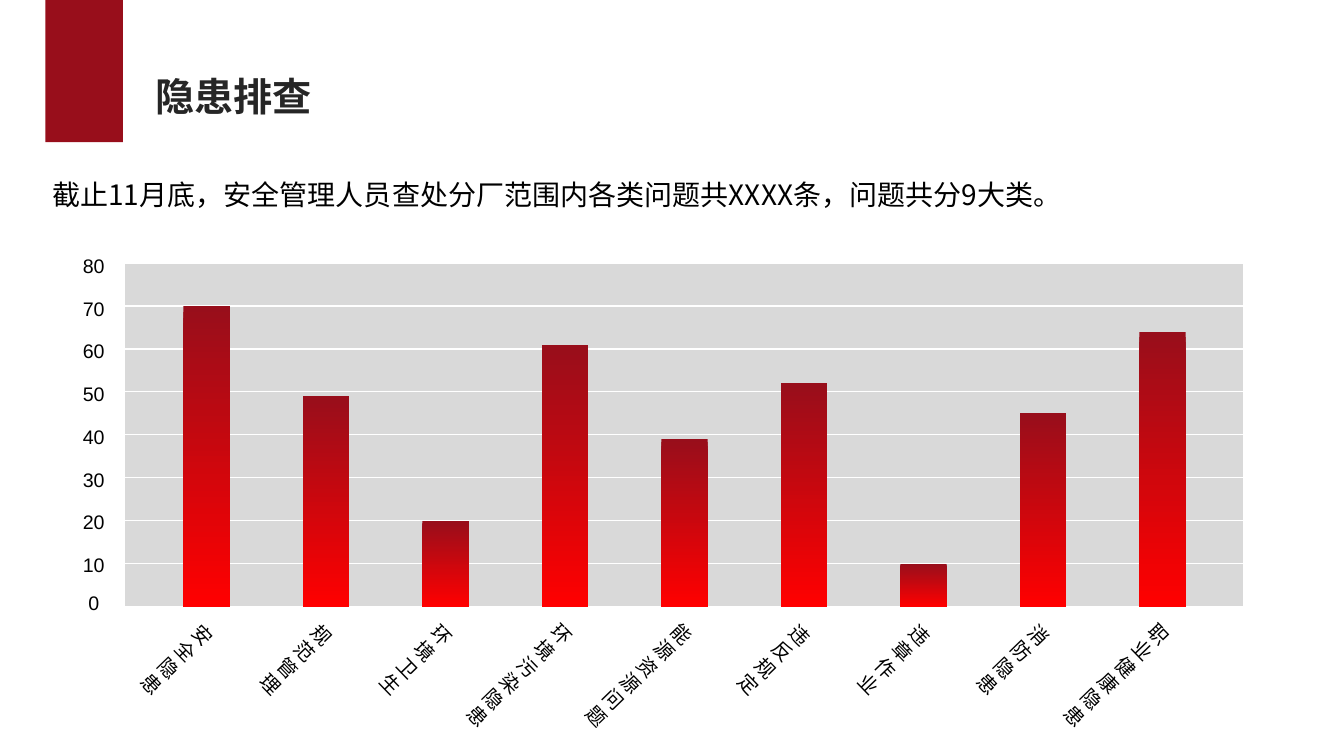
from lxml import etree
from pptx import Presentation
from pptx.dml.color import RGBColor
from pptx.enum.shapes import MSO_SHAPE
from pptx.enum.text import MSO_ANCHOR, MSO_AUTO_SIZE, PP_ALIGN
from pptx.oxml.ns import qn
from pptx.util import Pt

PX = 9144  # 100 px to the inch
DARK_RED = RGBColor(0x98, 0x0E, 0x1B)
RED = RGBColor(0xFF, 0x00, 0x00)
GREY = RGBColor(0xD9, 0xD9, 0xD9)
WHITE = RGBColor(0xFF, 0xFF, 0xFF)
CHARCOAL = RGBColor(0x26, 0x26, 0x26)
BLACK = RGBColor(0x00, 0x00, 0x00)
RECTANGLE = MSO_SHAPE.RECTANGLE
LEFT, CENTER, JUSTIFY = PP_ALIGN.LEFT, PP_ALIGN.CENTER, PP_ALIGN.JUSTIFY
TOP = MSO_ANCHOR.TOP
GROW = MSO_AUTO_SIZE.SHAPE_TO_FIT_TEXT
CHINESE, LATIN = "Noto Sans CJK SC", "Arial"

HAZARDS = [
    ("安全隐患", 70), ("规范管理", 49), ("环境卫生", 20),
    ("环境污染隐患", 61), ("能源资源问题", 39), ("违反规定", 52),
    ("违章作业", 10), ("消防隐患", 45), ("职业健康隐患", 64),
]
AXIS_MAX, AXIS_STEP = 80, 10


def emu(*lengths):
    return [round(length * PX) for length in lengths]


def write(shape, text, size, font=CHINESE, color=BLACK, align=LEFT, wrap=True, bold=False):
    frame = shape.text_frame
    frame.text = text
    frame.word_wrap = wrap
    frame.auto_size = GROW
    frame.vertical_anchor = TOP
    para = frame.paragraphs[0]
    para.alignment = align
    para.font.size = Pt(size)
    para.font.bold = bold
    para.font.color.rgb = color
    para.font.name = font
    east_asian = etree.SubElement(para.font._element, qn("a:ea"))
    east_asian.set("typeface", font)


def add_text(page, box, text, size, **style):
    shape = page.shapes.add_textbox(*emu(*box))
    write(shape, text, size, **style)
    return shape


def add_bar(page, box):
    bar = page.shapes.add_shape(RECTANGLE, *emu(*box))
    bar.shadow.inherit = False
    bar.line.fill.background()
    return bar


def add_header(page, left, top):
    ribbon = add_bar(page, (left, top, 77, 141))
    ribbon.fill.solid()
    ribbon.fill.fore_color.rgb = DARK_RED
    title = page.shapes.title
    title.left, title.top, title.width, title.height = emu(left + 99, top + 67, 177, 57)
    write(title, "隐患排查", 28, color=CHARCOAL, wrap=False, bold=True)


def set_cell_borders(cell, color, points):
    properties = cell._tc.get_or_add_tcPr()
    for index, side in enumerate(("a:lnL", "a:lnR", "a:lnT", "a:lnB")):
        line = etree.Element(qn(side), w=str(Pt(points)))
        fill = etree.SubElement(line, qn("a:solidFill"))
        etree.SubElement(fill, qn("a:srgbClr"), val=str(color))
        properties.insert(index, line)


def add_grid(page, box):
    rows = AXIS_MAX // AXIS_STEP
    table = page.shapes.add_table(rows, 1, *emu(*box)).table
    table.first_row = table.horz_banding = False
    for row in table.rows:
        row.height = round(box[3] * PX / rows)
        cell = row.cells[0]
        cell.fill.solid()
        cell.fill.fore_color.rgb = GREY
        set_cell_borders(cell, WHITE, 1)


def add_value_axis(page, left, top, lowest):
    for index, value in enumerate(range(AXIS_MAX, -1, -AXIS_STEP)):
        label_top = min(top + 42.4 * index, lowest)
        add_text(page, (left, label_top, 46, 34), str(value), 14, font=LATIN, align=CENTER)


def add_category_label(page, text, bar_center, bottom):
    """Slanted label, one character to a line, below its bar."""
    is_long = len(text) > 4
    shift, drop, height = (43, -5, 151) if is_long else (27, 3, 104)
    box = (bar_center - shift - 23, bottom + drop, 46, height)
    add_text(page, box, text, 14).rotation = 45.9


def add_hazard_chart(page, box):
    left, top, width, height = box
    bottom = top + height
    bar_width, pitch = 46, 118.5
    add_grid(page, box)
    for index, (name, count) in enumerate(HAZARDS):
        bar_left = left + 59 + pitch * index
        bar_height = height * count / AXIS_MAX
        bar = add_bar(page, (bar_left, bottom - bar_height, bar_width, bar_height))
        bar.fill.gradient()
        bar.fill.gradient_angle = 270
        for stop, color in zip(bar.fill.gradient_stops, (DARK_RED, RED)):
            stop.color.rgb = color
        add_category_label(page, name, bar_left + bar_width / 2, bottom)
    add_value_axis(page, left - 53, top - 14, bottom - 21)


def main():
    deck = Presentation()
    deck.slide_width, deck.slide_height = emu(1333, 750)
    page = deck.slides.add_slide(deck.slide_layouts.get_by_name("Title Only"))
    add_header(page, 45, 0)
    add_text(page, (42, 171, 1062, 44),
             "截止11月底，安全管理人员查处分厂范围内各类问题共XXXX条，问题共分9大类。",
             20, align=JUSTIFY)
    add_hazard_chart(page, (123, 261, 1110, 341))
    deck.save("out.pptx")


if __name__ == "__main__":
    main()
